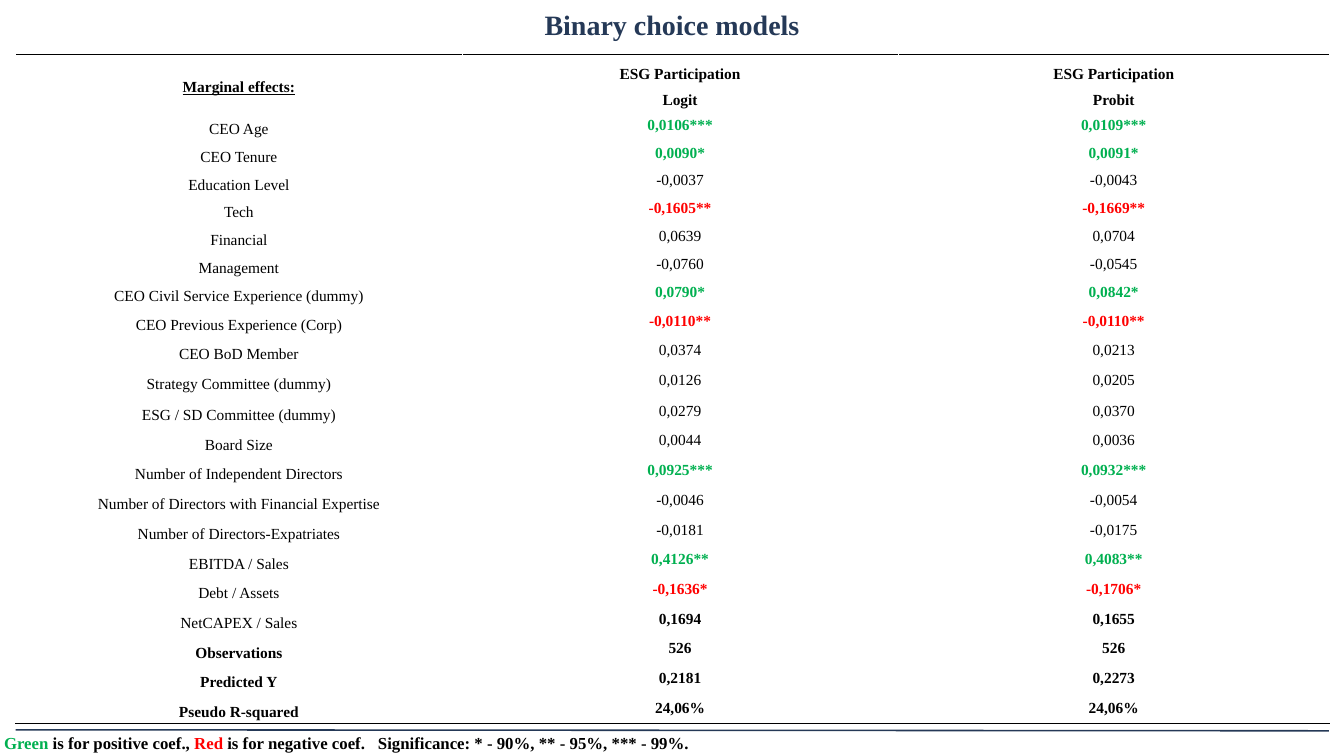
from lxml import etree
from pptx import Presentation
from pptx.dml.color import RGBColor
from pptx.enum.shapes import MSO_CONNECTOR
from pptx.enum.text import MSO_ANCHOR, MSO_AUTO_SIZE, PP_ALIGN
from pptx.oxml.ns import qn
from pptx.util import Inches, Pt

CENTER, LEFT = PP_ALIGN.CENTER, PP_ALIGN.LEFT
MIDDLE = MSO_ANCHOR.MIDDLE
GROW = MSO_AUTO_SIZE.SHAPE_TO_FIT_TEXT
STRAIGHT = MSO_CONNECTOR.STRAIGHT
FONT = "Times New Roman"
COLORS = {"navy": "253957", "black": "000000", "green": "00B050", "red": "FF0000"}

HEADERS = ["Marginal effects:", "ESG Participation\nLogit", "ESG Participation\nProbit"]
RESULTS = [
    ("CEO Age", "0,0106***", "0,0109***"),
    ("CEO Tenure", "0,0090*", "0,0091*"),
    ("Education Level", "-0,0037", "-0,0043"),
    ("Tech", "-0,1605**", "-0,1669**"),
    ("Financial", "0,0639", "0,0704"),
    ("Management", "-0,0760", "-0,0545"),
    ("CEO Civil Service Experience (dummy)", "0,0790*", "0,0842*"),
    ("CEO Previous Experience (Corp)", "-0,0110**", "-0,0110**"),
    ("CEO BoD Member", "0,0374", "0,0213"),
    ("Strategy Committee (dummy)", "0,0126", "0,0205"),
    ("ESG / SD Committee (dummy)", "0,0279", "0,0370"),
    ("Board Size", "0,0044", "0,0036"),
    ("Number of Independent Directors", "0,0925***", "0,0932***"),
    ("Number of Directors with Financial Expertise", "-0,0046", "-0,0054"),
    ("Number of Directors-Expatriates", "-0,0181", "-0,0175"),
    ("EBITDA / Sales", "0,4126**", "0,4083**"),
    ("Debt / Assets", "-0,1636*", "-0,1706*"),
    ("NetCAPEX / Sales", "0,1694", "0,1655"),
    ("Observations", "526", "526"),
    ("Predicted Y", "0,2181", "0,2273"),
    ("Pseudo R-squared", "24,06%", "24,06%"),
]
SPACED_LABELS = {"Number of Directors-Expatriates", "EBITDA / Sales",
                 "Debt / Assets", "NetCAPEX / Sales"}
SUMMARY_LABELS = {"Observations", "Predicted Y", "Pseudo R-squared"}
BOLD_VALUE_LABELS = SUMMARY_LABELS | {"NetCAPEX / Sales"}
COL_WIDTHS = [8.86, 8.65, 8.56]
ROW_HEIGHTS = [1.13, 0.53, 0.53, 0.55, 0.52, 0.52, 0.52, 0.58, 0.58, 0.53, 0.64] + [0.59] * 11


def write(tf, text, size=22, color="black", bold=False, underline=False,
          align=CENTER, spacing=1.0, after=0, inset=(0.08, 0.08)):
    """Fill a text frame; text is a string or a list of (text, color) runs."""
    tf.word_wrap = True
    tf.vertical_anchor = MIDDLE
    tf.margin_left = tf.margin_right = Inches(inset[0])
    tf.margin_top = tf.margin_bottom = Inches(inset[1])
    lines = [[(line, color)] for line in text.split("\n")] if isinstance(text, str) else [text]
    for i, runs in enumerate(lines):
        p = tf.add_paragraph() if i else tf.paragraphs[0]
        p.alignment = align
        p.line_spacing = spacing
        p.space_before = Pt(0)
        p.space_after = Pt(after)
        for run_text, run_color in runs:
            r = p.add_run()
            r.text = run_text
            r.font.name = FONT
            r.font.size = Pt(size)
            r.font.bold = bold
            r.font.underline = underline
            r.font.color.rgb = RGBColor.from_string(COLORS[run_color])


def add_border(cell, side):
    """Draw a 1 pt black rule on one side ("T" or "B") of a cell."""
    ln = etree.Element(qn(f"a:ln{side}"), w=str(Pt(1)))
    fill = etree.SubElement(ln, qn("a:solidFill"))
    etree.SubElement(fill, qn("a:srgbClr"), val=COLORS["black"])
    cell._tc.get_or_add_tcPr().insert(0, ln)


prs = Presentation()
prs.slide_width, prs.slide_height = Inches(26.67), Inches(15)
s = prs.slides.add_slide(prs.slide_layouts[5])

# Title
title = s.shapes.title
title.left, title.top = Inches(0), Inches(0.07)
title.width, title.height = Inches(26.67), Inches(0.83)
title.text_frame.auto_size = GROW
write(title.text_frame, "Binary choice models", size=40, color="navy", bold=True)

# Results table
table = s.shapes.add_table(len(ROW_HEIGHTS), len(COL_WIDTHS), Inches(0.31), Inches(1.08),
                           Inches(sum(COL_WIDTHS)), Inches(sum(ROW_HEIGHTS))).table
table.first_row = table.horz_banding = False
for col, width in zip(table.columns, COL_WIDTHS):
    col.width = Inches(width)
for row, height in zip(table.rows, ROW_HEIGHTS):
    row.height = Inches(height)

for i, texts in enumerate([HEADERS] + RESULTS):
    label = texts[0]
    for j, text in enumerate(texts):
        cell = table.cell(i, j)
        cell.fill.background()
        cell.vertical_anchor = MIDDLE
        cell.margin_left = cell.margin_right = Inches(0.05)
        cell.margin_top = cell.margin_bottom = 0
        style = {"inset": (0.05, 0)}
        if i == 0:
            style.update(bold=True, underline=j == 0, spacing=1.5)
            add_border(cell, "T")
        elif j == 0:
            style.update(bold=label in SUMMARY_LABELS, spacing=1.5,
                         after=10 if label in SPACED_LABELS else 0)
        elif text.endswith("*"):
            style.update(bold=True, color="red" if text.startswith("-") else "green")
        else:
            style.update(bold=label in BOLD_VALUE_LABELS)
        if i == len(RESULTS):
            add_border(cell, "B")
        write(cell.text_frame, text, **style)

# Rule above the legend
rule = s.shapes.add_connector(STRAIGHT, Inches(0.31), Inches(14.48), Inches(26.37), Inches(14.5))
rule.line.color.rgb = RGBColor.from_string(COLORS["navy"])
rule.line.width = Pt(2.25)
etree.SubElement(rule._element.spPr, qn("a:effectLst"))

# Legend
legend = s.shapes.add_textbox(Inches(0), Inches(14.46), Inches(26.67), Inches(0.56))
tf = legend.text_frame
tf.auto_size = GROW
tabs = etree.Element(qn("a:tabLst"))
etree.SubElement(tabs, qn("a:tab"), pos=str(Inches(7.42)), algn="l")
write(tf, [("Green ", "green"), ("is for positive coef., ", "black"), ("Red ", "red"),
           ("is for negative coef.\tSignificance: * - 90%, ** - 95%, *** - 99%.", "black")],
      size=24, bold=True, align=LEFT)
tf.paragraphs[0]._p.get_or_add_pPr().append(tabs)

prs.save("out.pptx")
